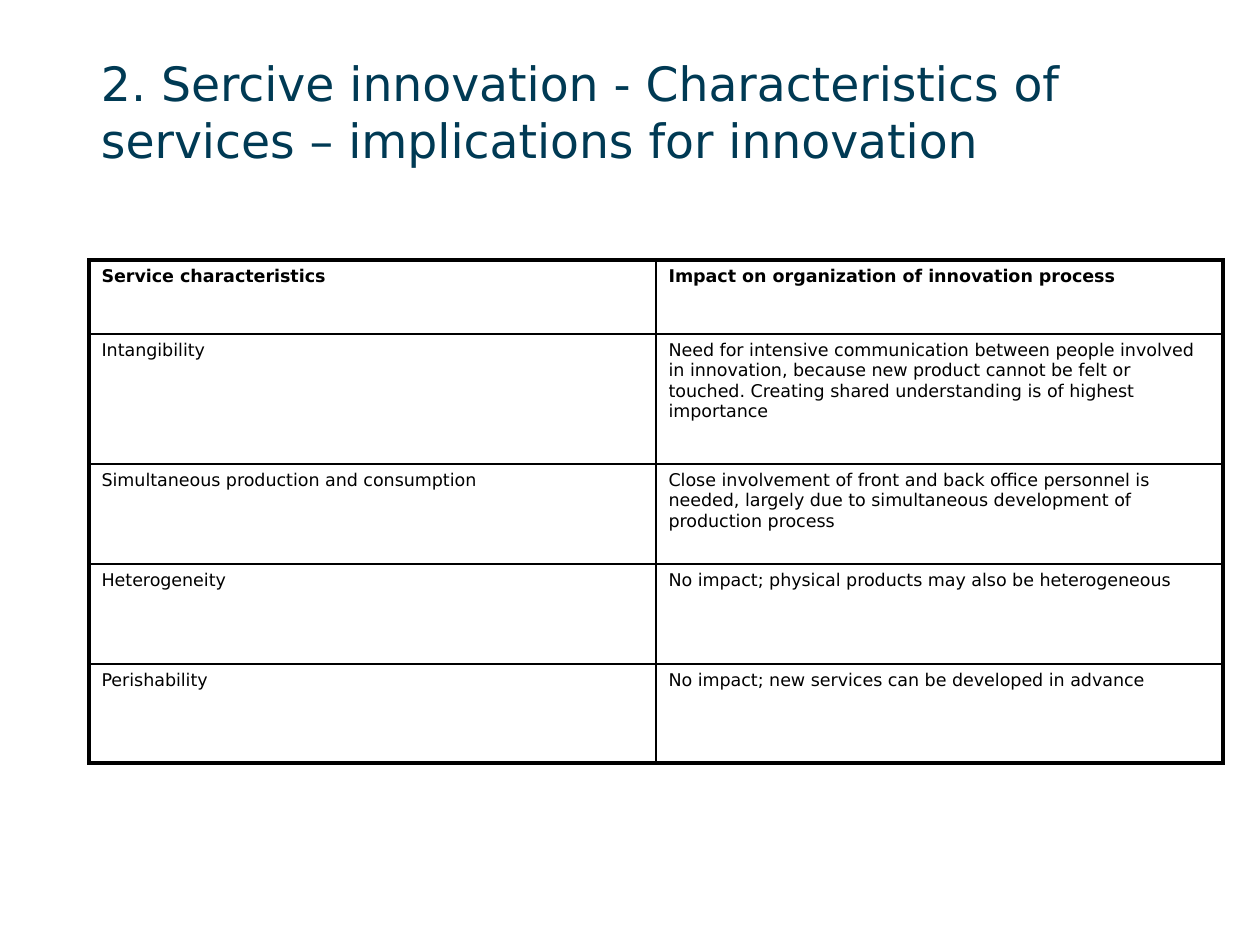
"""Build a slide with a table on service characteristics and innovation."""
from lxml import etree
from pptx import Presentation
from pptx import util as u
from pptx.dml.color import RGBColor
from pptx.enum import text
from pptx.oxml.ns import qn

SCALE = 914400 / 126
FONT = "DejaVu Sans"
COLORS = {"title": "003A54", "ink": "000000"}
THIN, THICK = 1, 2.25


def px(length):
    return u.Emu(round(length * SCALE))


def add_run(paragraph, words, size, color, bold=False):
    run = paragraph.add_run()
    run.text = words
    run.font.name = FONT
    run.font.size = u.Pt(size)
    run.font.bold = bold
    run.font.color.rgb = RGBColor.from_string(COLORS[color])


prs = Presentation()
prs.slide_width, prs.slide_height = px(1260), px(945)
slide = prs.slides.add_slide(prs.slide_layouts[6])

title = slide.shapes.add_textbox(px(101), px(53), px(974), px(115)).text_frame
title.word_wrap = True
title.vertical_anchor = text.MSO_ANCHOR.BOTTOM
title.margin_left = title.margin_top = title.margin_right = title.margin_bottom = 0
add_run(
    title.paragraphs[0],
    "2. Sercive innovation - Characteristics of services – implications for innovation",
    27,
    "title",
)

impacts = [
    ("Service characteristics", "Impact on organization of innovation process"),
    (
        "Intangibility",
        "Need for intensive communication between people involved in innovation, "
        "because new product cannot be felt or touched. "
        "Creating shared understanding is of highest importance",
    ),
    (
        "Simultaneous production and consumption",
        "Close involvement of front and back office personnel is needed, "
        "largely due to simultaneous development of production process",
    ),
    ("Heterogeneity", "No impact; physical products may also be heterogeneous"),
    ("Perishability", "No impact; new services can be developed in advance"),
]
row_heights = [74, 130, 100, 100, 99]
column_width = 567
last_row, last_column = len(impacts) - 1, 1

grid = slide.shapes.add_table(
    len(impacts), 2, px(89), px(260), px(2 * column_width), px(sum(row_heights))
).table
grid.first_row = grid.horz_banding = False
for column in grid.columns:
    column.width = px(column_width)

for r, (height, entries) in enumerate(zip(row_heights, impacts)):
    grid.rows[r].height = px(height)
    for c, words in enumerate(entries):
        cell = grid.cell(r, c)
        add_run(cell.text_frame.paragraphs[0], words, 10, "ink", bold=r == 0)
        outer_edges = {
            "a:lnL": c == 0,
            "a:lnR": c == last_column,
            "a:lnT": r == 0,
            "a:lnB": r == last_row,
        }
        properties = cell._tc.get_or_add_tcPr()
        for edge, is_outer in outer_edges.items():
            width = u.Pt(THICK if is_outer else THIN)
            border = etree.SubElement(properties, qn(edge), w=str(int(width)))
            solid = etree.SubElement(border, qn("a:solidFill"))
            etree.SubElement(solid, qn("a:srgbClr"), val=COLORS["ink"])
        cell.fill.background()

prs.save("out.pptx")
